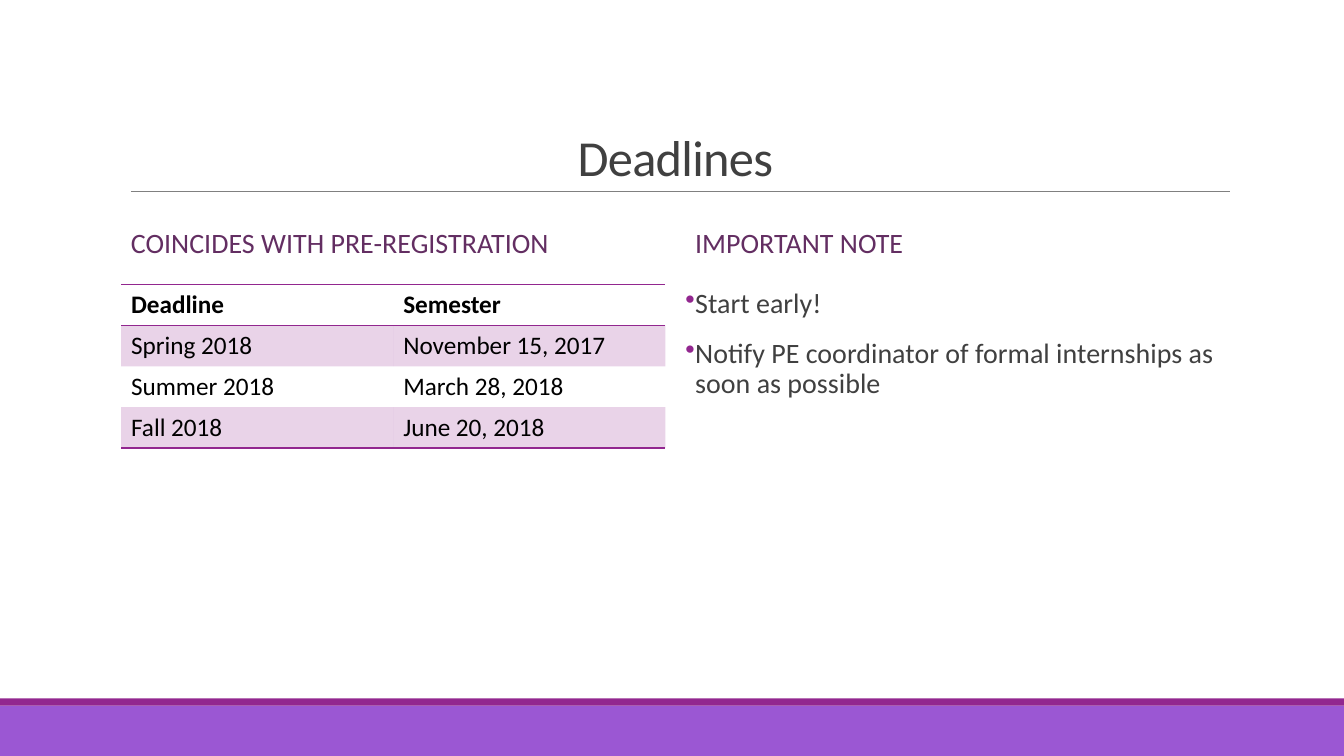
from dataclasses import dataclass

from lxml import etree
from pptx import Presentation
from pptx.dml.color import RGBColor
from pptx.enum.shapes import MSO_CONNECTOR, MSO_SHAPE
from pptx.enum.text import MSO_ANCHOR, PP_ALIGN
from pptx.oxml.ns import qn
from pptx.slide import Slide
from pptx.table import _Cell
from pptx.text.text import TextFrame, _Paragraph
from pptx.util import Cm, Pt

RECTANGLE = MSO_SHAPE.RECTANGLE
STRAIGHT = MSO_CONNECTOR.STRAIGHT
TOP, MIDDLE, BOTTOM = MSO_ANCHOR.TOP, MSO_ANCHOR.MIDDLE, MSO_ANCHOR.BOTTOM
CENTER = PP_ALIGN.CENTER

PURPLE = RGBColor(0x92, 0x27, 0x8F)
LAVENDER = RGBColor(0x9B, 0x57, 0xD3)
PLUM = RGBColor(0x63, 0x2E, 0x62)
CHARCOAL = RGBColor(0x40, 0x40, 0x40)
GRAY = RGBColor(0x80, 0x80, 0x80)
BLACK = RGBColor(0, 0, 0)

FONT = "Calibri"
PLAIN_TABLE_STYLE = "{2D5ABB26-0587-4C30-8999-92F81FD0307C}"
SLIDE_WIDTH, SLIDE_HEIGHT = 33.87, 19.05
COLUMN_WIDTH = 13.72
LEFT_COLUMN, RIGHT_COLUMN = 3.05, 17.27
HEADING_TOP, CONTENT_TOP = 5.13, 7.17
ROW_HEIGHT = 1.03


@dataclass(frozen=True)
class Band:
    top: float
    height: float
    color: RGBColor


@dataclass(frozen=True)
class Heading:
    left: float
    text: str


BANDS = [Band(17.78, 1.27, LAVENDER), Band(17.6, 0.18, PURPLE)]
HEADINGS = [
    Heading(LEFT_COLUMN, "COINCIDES WITH PRE-REGISTRATION"),
    Heading(RIGHT_COLUMN, "IMPORTANT NOTE"),
]
DEADLINES = [
    ("Deadline", "Semester"),
    ("Spring 2018", "November 15, 2017"),
    ("Summer 2018", "March 28, 2018"),
    ("Fall 2018", "June 20, 2018"),
]
NOTES = [
    "Start early!",
    "Notify PE coordinator of formal internships as soon as possible",
]


def style_font(paragraph: _Paragraph, size: float, color: RGBColor) -> None:
    paragraph.font.name = FONT
    paragraph.font.size = Pt(size)
    paragraph.font.color.rgb = color


def style_body(paragraph: _Paragraph, color: RGBColor) -> None:
    style_font(paragraph, 20, color)
    paragraph.line_spacing = 0.9
    paragraph.space_before = Pt(12)
    paragraph.space_after = Pt(2)


def add_text_frame(slide: Slide, left: float, top: float, width: float,
                   height: float, anchor: MSO_ANCHOR) -> TextFrame:
    box = slide.shapes.add_textbox(Cm(left), Cm(top), Cm(width), Cm(height))
    frame = box.text_frame
    frame.word_wrap = True
    frame.vertical_anchor = anchor
    return frame


def add_band(slide: Slide, band: Band) -> None:
    bar = slide.shapes.add_shape(
        RECTANGLE, 0, Cm(band.top), Cm(SLIDE_WIDTH), Cm(band.height))
    bar.shadow.inherit = False
    bar.fill.solid()
    bar.fill.fore_color.rgb = band.color
    bar.line.fill.background()


def add_title(slide: Slide) -> None:
    title = add_text_frame(slide, LEFT_COLUMN, 0.79, 27.94, 4.04, BOTTOM).paragraphs[0]
    title.text = "Deadlines"
    style_font(title, 36, CHARCOAL)
    title.alignment = CENTER
    title.line_spacing = 0.85
    title.runs[0].font._element.set("spc", "-50")

    rule = slide.shapes.add_connector(STRAIGHT, Cm(3.3), Cm(4.83), Cm(31), Cm(4.83))
    rule.line.color.rgb = GRAY
    rule.line.width = Pt(0.5)
    etree.SubElement(rule.element.spPr, qn("a:effectLst"))


def add_heading(slide: Slide, heading: Heading) -> None:
    frame = add_text_frame(
        slide, heading.left, HEADING_TOP, COLUMN_WIDTH, 2.05, MIDDLE)
    frame.paragraphs[0].text = heading.text
    style_body(frame.paragraphs[0], PLUM)


def add_border(cell: _Cell, edge: str) -> None:
    """Draw a thin purple border; edge is lnT or lnB, drawn in that order."""
    properties = cell._tc.get_or_add_tcPr()
    line = etree.Element(qn(f"a:{edge}"), w=str(Pt(1)))
    fill = etree.SubElement(line, qn("a:solidFill"))
    etree.SubElement(fill, qn("a:srgbClr"), val=str(PURPLE))
    properties.insert(len(properties.findall(qn("a:lnT"))), line)


def tint(cell: _Cell) -> None:
    """Fill the cell with purple at 20% opacity."""
    cell.fill.solid()
    cell.fill.fore_color.rgb = PURPLE
    color = cell._tc.tcPr.find(f".//{qn('a:srgbClr')}")
    etree.SubElement(color, qn("a:alpha"), val="20000")


def add_deadline_table(slide: Slide) -> None:
    rows, columns = len(DEADLINES), len(DEADLINES[0])
    frame = slide.shapes.add_table(
        rows, columns, Cm(LEFT_COLUMN), Cm(CONTENT_TOP),
        Cm(COLUMN_WIDTH), Cm(rows * ROW_HEIGHT))
    table = frame.table
    table.first_row = table.horz_banding = False
    next(frame.element.iter(qn("a:tableStyleId"))).text = PLAIN_TABLE_STYLE
    for row, values in enumerate(DEADLINES):
        for column, value in enumerate(values):
            cell = table.cell(row, column)
            cell.text = value
            paragraph = cell.text_frame.paragraphs[0]
            style_font(paragraph, 18, BLACK)
            paragraph.font.bold = row == 0
            if row % 2:
                tint(cell)
            else:
                cell.fill.background()
            if row == 0:
                add_border(cell, "lnT")
            if row in (0, rows - 1):
                add_border(cell, "lnB")


def add_bullet(paragraph: _Paragraph) -> None:
    properties = paragraph._p.get_or_add_pPr()
    indent = Cm(0.25)
    properties.set("marL", str(indent))
    properties.set("indent", str(-indent))
    color = etree.Element(qn("a:buClr"))
    etree.SubElement(color, qn("a:srgbClr"), val=str(PURPLE))
    bullet = etree.Element(qn("a:buChar"), char="•")
    properties.find(qn("a:spcAft")).addnext(color)
    color.addnext(bullet)


def add_notes_list(slide: Slide) -> None:
    frame = add_text_frame(slide, RIGHT_COLUMN, CONTENT_TOP, COLUMN_WIDTH, 9.37, TOP)
    frame.margin_left = frame.margin_right = 0
    frame.text = "\n".join(NOTES)
    for paragraph in frame.paragraphs:
        style_body(paragraph, CHARCOAL)
        add_bullet(paragraph)


def main() -> None:
    presentation = Presentation()
    presentation.slide_width = Cm(SLIDE_WIDTH)
    presentation.slide_height = Cm(SLIDE_HEIGHT)
    slide = presentation.slides.add_slide(presentation.slide_layouts[6])
    for band in BANDS:
        add_band(slide, band)
    add_title(slide)
    for heading in HEADINGS:
        add_heading(slide, heading)
    add_deadline_table(slide)
    add_notes_list(slide)
    presentation.save("out.pptx")


if __name__ == "__main__":
    main()
